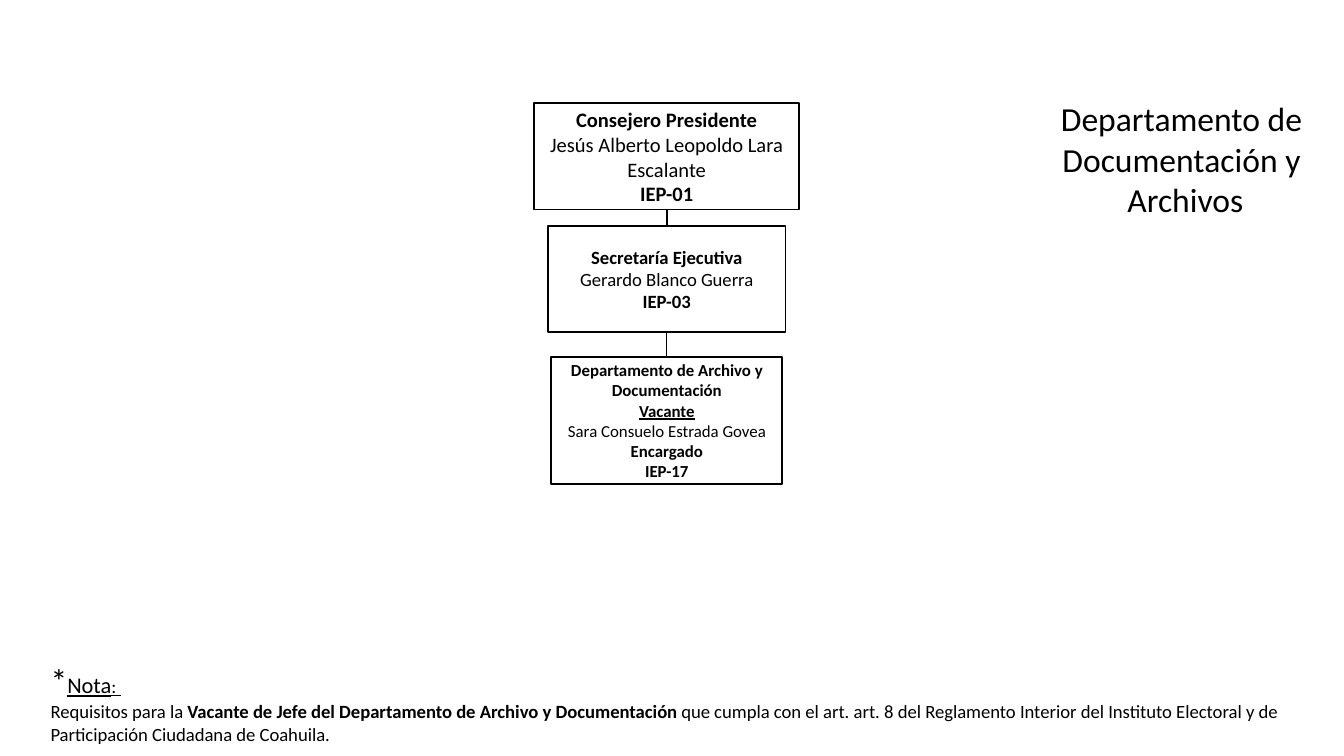
from pptx import Presentation
from pptx.dml.color import RGBColor
from pptx.enum.shapes import MSO_CONNECTOR, MSO_SHAPE
from pptx.enum.text import MSO_ANCHOR, PP_ALIGN
from pptx.oxml.ns import qn
from pptx.util import Pt
from lxml import etree

CENTER, LEFT = PP_ALIGN.CENTER, PP_ALIGN.LEFT
MIDDLE, TOP = MSO_ANCHOR.MIDDLE, MSO_ANCHOR.TOP
RECTANGLE, STRAIGHT = MSO_SHAPE.RECTANGLE, MSO_CONNECTOR.STRAIGHT

FONT = "Calibri"
COLORS = {"ink": "000000"}
BOLD = {"bold": True}
CHART_CENTER = 357.2

# top, width, height, font size, lines of (text, format)
POSITIONS = [
    (55.4, 141.8, 56.9, 11, [
        ("Consejero Presidente", BOLD),
        ("Jesús Alberto Leopoldo Lara Escalante", {}),
        ("IEP-01", BOLD),
    ]),
    (121, 127.4, 56.9, 10, [
        ("Secretaría Ejecutiva", BOLD),
        ("Gerardo Blanco Guerra", {}),
        ("IEP-03", BOLD),
    ]),
    (191.5, 123.8, 67.7, 9, [
        ("Departamento de Archivo y Documentación", BOLD),
        ("Vacante", {"bold": True, "underline": True}),
        ("Sara Consuelo Estrada Govea", {}),
        ("Encargado", BOLD),
        ("IEP-17", BOLD),
    ]),
]
LINK_WIDTHS = [1, 0.75]

TITLE = ["Departamento de ", "Documentación y ", "Archivos"]
NOTE = [
    [
        ("*", {"size": 18}),
        ("Nota", {"size": 12, "underline": True}),
        (": ", {"underline": True}),
    ],
    [
        ("Requisitos para la ", {}),
        ("Vacante de Jefe del Departamento de Archivo y Documentación ", BOLD),
        ("que cumpla con el art. art. 8 del Reglamento Interior del Instituto "
         "Electoral y de Participación Ciudadana de Coahuila.", {}),
    ],
]


def color(name):
    return RGBColor.from_string(COLORS[name])


def add_run(paragraph, text, size, bold=False, underline=False):
    run = paragraph.add_run()
    run.text = text
    font = run.font
    font.name, font.size = FONT, Pt(size)
    font.bold, font.underline = bold, underline
    font.color.rgb = color("ink")


def write_text(shape, paragraphs, size, align=LEFT, anchor=TOP):
    """Fill a shape with paragraphs, each a list of (text, format) runs."""
    frame = shape.text_frame
    frame.word_wrap = True
    frame.vertical_anchor = anchor
    for index, runs in enumerate(paragraphs):
        paragraph = frame.add_paragraph() if index else frame.paragraphs[0]
        paragraph.alignment = align
        for text, text_format in runs:
            add_run(paragraph, text, **{"size": size, **text_format})


def add_text(slide, left, top, width, height, paragraphs, **text_format):
    box = slide.shapes.add_textbox(Pt(left), Pt(top), Pt(width), Pt(height))
    write_text(box, paragraphs, **text_format)


def add_position(slide, top, width, height, size, lines):
    """Add one outlined box, centred on the chart axis."""
    shape = slide.shapes.add_shape(
        RECTANGLE, Pt(CHART_CENTER - width / 2), Pt(top), Pt(width), Pt(height))
    shape.shadow.inherit = False
    shape.fill.background()
    shape.line.color.rgb = color("ink")
    shape.line.width = Pt(1)
    write_text(shape, [[line] for line in lines], size, CENTER, MIDDLE)


def add_link(slide, top, bottom, width):
    link = slide.shapes.add_connector(
        STRAIGHT, Pt(CHART_CENTER), Pt(top), Pt(CHART_CENTER), Pt(bottom))
    link.line.color.rgb = color("ink")
    link.line.width = Pt(width)
    etree.SubElement(link._element.spPr, qn("a:effectLst"))


def main():
    presentation = Presentation()
    presentation.slide_width, presentation.slide_height = Pt(720), Pt(405)
    slide = presentation.slides.add_slide(presentation.slide_layouts[6])

    add_text(slide, 550, 49, 170, 72.7, [[(line, {})] for line in TITLE],
             size=18, align=CENTER)
    for position in POSITIONS:
        add_position(slide, *position)
    for upper, lower, width in zip(POSITIONS, POSITIONS[1:], LINK_WIDTHS):
        add_link(slide, upper[0] + upper[2], lower[0], width)
    add_text(slide, 20, 350, 692, 53.3, NOTE, size=10)

    presentation.save("out.pptx")


if __name__ == "__main__":
    main()
